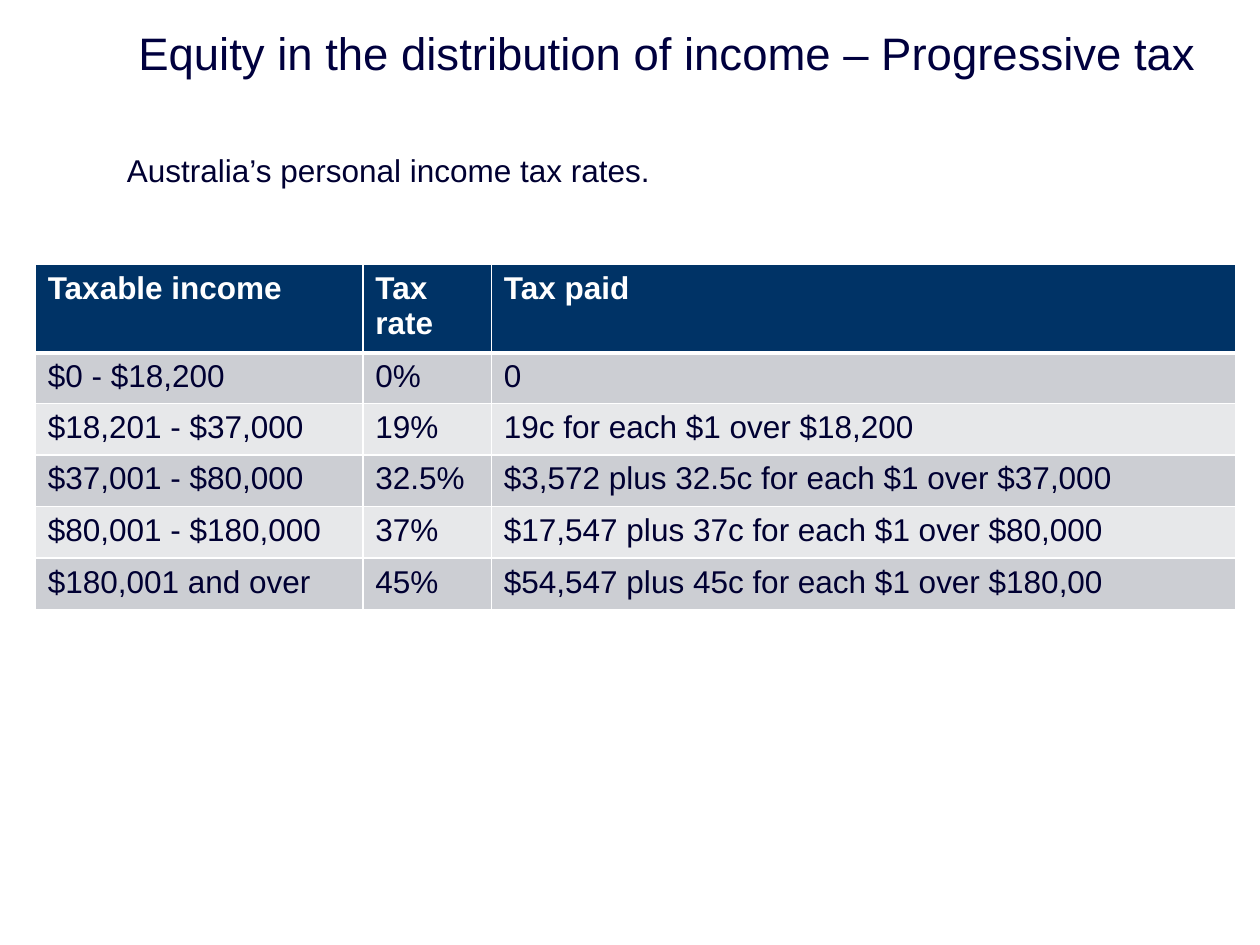
"""Build a slide on Australia's progressive income tax rates."""
from dataclasses import dataclass

from lxml.etree import SubElement
from pptx import Presentation
from pptx.dml.color import RGBColor as Color
from pptx.enum.text import MSO_ANCHOR as Anchor
from pptx.oxml.ns import qn
from pptx.slide import Slide
from pptx.table import _Cell as Cell
from pptx.text.text import _Paragraph as Paragraph
from pptx.util import Inches, Pt


@dataclass(frozen=True)
class Theme:
    font: str = "Arial"
    title_size: int = 26
    body_size: int = 18
    title: str = "00003E"
    text: str = "000032"
    white: str = "FFFFFF"
    header: str = "003366"
    bands: tuple[str, str] = ("CCCED3", "E7E8EA")
    thin: int = 1
    thick: int = 3


@dataclass(frozen=True)
class TextBox:
    text: str
    left: float
    top: float
    width: float
    height: float
    size: int
    color: str
    anchor: Anchor = Anchor.TOP


@dataclass(frozen=True)
class Bracket:
    income: str
    rate: str
    paid: str


THEME = Theme()
TEXT_BOXES = (
    TextBox("Equity in the distribution of income – Progressive tax",
            1, 0.16, 9, 0.51, THEME.title_size, THEME.title, Anchor.MIDDLE),
    TextBox("Australia’s personal income tax rates.",
            0.91, 1.15, 8.27, 0.4, THEME.body_size, THEME.text),
)
BRACKETS = (
    Bracket("Taxable income", "Tax rate", "Tax paid"),
    Bracket("$0 - $18,200", "0%", "0"),
    Bracket("$18,201 - $37,000", "19%", "19c for each $1 over $18,200"),
    Bracket("$37,001 - $80,000", "32.5%", "$3,572 plus 32.5c for each $1 over $37,000"),
    Bracket("$80,001 - $180,000", "37%", "$17,547 plus 37c for each $1 over $80,000"),
    Bracket("$180,001 and over", "45%", "$54,547 plus 45c for each $1 over $180,00"),
)
COLUMN_WIDTHS = (2.6, 1.02, 5.91)
ROW_HEIGHTS = (0.41, 0.32, 0.41, 0.41, 0.41, 0.41)


def style_text(para: Paragraph, size: int, color: str, bold: bool = False) -> None:
    """Set the font of a whole paragraph."""
    para.font.name = THEME.font
    para.font.size = Pt(size)
    para.font.bold = bold
    para.font.color.rgb = Color.from_string(color)


def add_text_box(page: Slide, item: TextBox) -> None:
    """Add a wrapping text box."""
    box = page.shapes.add_textbox(Inches(item.left), Inches(item.top),
                                  Inches(item.width), Inches(item.height))
    frame = box.text_frame
    frame.word_wrap = True
    frame.vertical_anchor = item.anchor
    frame.text = item.text
    style_text(frame.paragraphs[0], item.size, item.color)


def add_borders(cell: Cell, widths: dict[str, int]) -> None:
    """Draw white borders of the given point widths around a cell."""
    properties = cell._tc.get_or_add_tcPr()
    for side, width in widths.items():
        line = SubElement(properties, qn(f"a:{side}"), w=str(Pt(width)))
        fill = SubElement(line, qn("a:solidFill"))
        SubElement(fill, qn("a:srgbClr"), val=THEME.white)


def fill_cell(cell: Cell, text: str, row: int) -> None:
    """Write a cell and style it as header or banded body."""
    is_header = row == 0
    add_borders(cell, {
        "lnL": THEME.thin,
        "lnR": THEME.thin,
        "lnT": THEME.thick if row == 1 else THEME.thin,
        "lnB": THEME.thick if is_header else THEME.thin,
    })
    cell.fill.solid()
    cell.fill.fore_color.rgb = Color.from_string(
        THEME.header if is_header else THEME.bands[(row - 1) % 2])
    cell.text = text
    style_text(cell.text_frame.paragraphs[0], THEME.body_size,
               THEME.white if is_header else THEME.text, is_header)


def add_tax_table(page: Slide) -> None:
    """Add the table of tax brackets."""
    table = page.shapes.add_table(
        len(BRACKETS), len(COLUMN_WIDTHS), Inches(0.28), Inches(2.1),
        Inches(sum(COLUMN_WIDTHS)), Inches(sum(ROW_HEIGHTS))).table
    for column, width in zip(table.columns, COLUMN_WIDTHS):
        column.width = Inches(width)
    for index, (bracket, height) in enumerate(zip(BRACKETS, ROW_HEIGHTS)):
        row = table.rows[index]
        row.height = Inches(height)
        for cell, text in zip(row.cells, (bracket.income, bracket.rate, bracket.paid)):
            fill_cell(cell, text, index)


def main() -> None:
    """Build and save the deck."""
    deck = Presentation()
    deck.slide_width, deck.slide_height = Inches(10), Inches(7.5)
    page = deck.slides.add_slide(deck.slide_layouts[6])
    for item in TEXT_BOXES:
        add_text_box(page, item)
    add_tax_table(page)
    deck.save("out.pptx")


if __name__ == "__main__":
    main()
